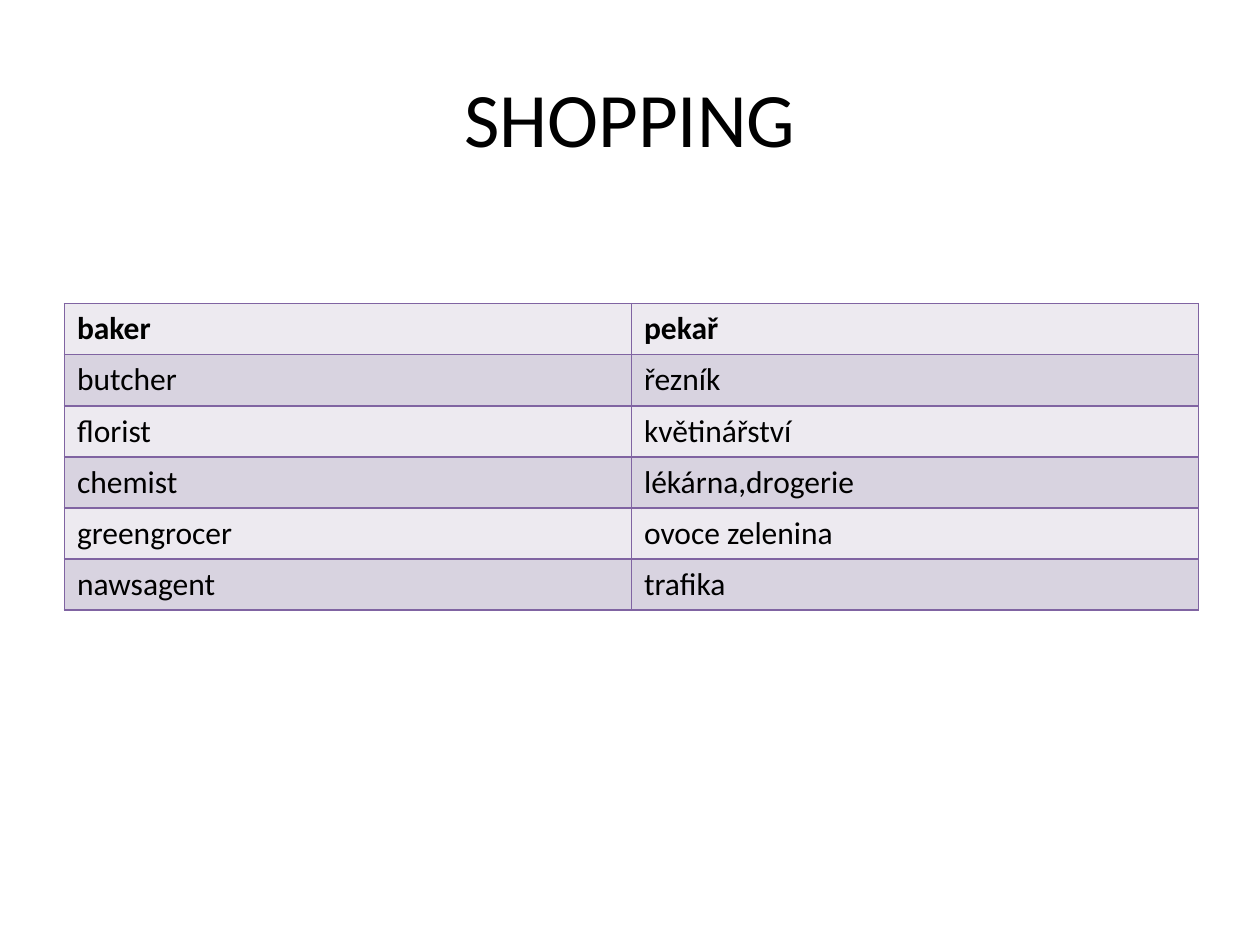
"""Build the SHOPPING vocabulary slide."""
from dataclasses import dataclass

from lxml.etree import SubElement
from pptx import Presentation
from pptx.dml.color import RGBColor
from pptx.enum.text import MSO_VERTICAL_ANCHOR as Anchor, PP_PARAGRAPH_ALIGNMENT as Align
from pptx.oxml.ns import qn
from pptx.slide import Slide
from pptx.table import _Cell as Cell
from pptx.text.text import _Paragraph as Paragraph
from pptx.util import Cm, Pt

COLORS = {
    "text": "000000",
    "border": "8064A2",
    "light_row": "EDEAF0",
    "dark_row": "D8D3E0",
}
FONT = "Calibri"


@dataclass(frozen=True)
class Entry:
    english: str
    czech: str
    bold: bool = False


ENTRIES = [
    Entry("baker", "pekař", bold=True),
    Entry("butcher", "řezník"),
    Entry("florist", "květinářství"),
    Entry("chemist", "lékárna,drogerie"),
    Entry("greengrocer", "ovoce zelenina"),
    Entry("nawsagent", "trafika"),
]


def add_run(paragraph: Paragraph, text: str, size: int, bold: bool = False) -> None:
    run = paragraph.add_run()
    run.text = text
    run.font.name = FONT
    run.font.size = Pt(size)
    run.font.bold = bold
    run.font.color.rgb = RGBColor.from_string(COLORS["text"])


def add_borders(cell: Cell) -> None:
    properties = cell._tc.get_or_add_tcPr()
    for side in ("lnL", "lnR", "lnT", "lnB"):
        line = SubElement(properties, qn(f"a:{side}"), w=str(Pt(1)))
        fill = SubElement(line, qn("a:solidFill"))
        SubElement(fill, qn("a:srgbClr"), val=COLORS["border"])


def add_title(slide: Slide, text: str) -> None:
    title = slide.shapes.title
    title.left, title.top, title.width, title.height = Cm(1.27), Cm(0.76), Cm(22.86), Cm(3.18)
    title.text_frame.vertical_anchor = Anchor.MIDDLE
    paragraph = title.text_frame.paragraphs[0]
    paragraph.alignment = Align.CENTER
    add_run(paragraph, text, 44)


def add_vocabulary(slide: Slide, entries: list[Entry]) -> None:
    row_height = Cm(1.03)
    table = slide.shapes.add_table(
        len(entries), 2, Cm(1.3), Cm(6.12), Cm(22.86), row_height * len(entries)
    ).table
    for index, (row, entry) in enumerate(zip(table.rows, entries)):
        row.height = row_height
        shade = COLORS["dark_row" if index % 2 else "light_row"]
        for cell, word in zip(row.cells, (entry.english, entry.czech)):
            add_borders(cell)
            cell.fill.solid()
            cell.fill.fore_color.rgb = RGBColor.from_string(shade)
            add_run(cell.text_frame.paragraphs[0], word, 18, entry.bold)


def main() -> None:
    presentation = Presentation()
    presentation.slide_width, presentation.slide_height = Cm(25.4), Cm(19.05)
    slide = presentation.slides.add_slide(presentation.slide_layouts.get_by_name("Title Only"))
    add_title(slide, "SHOPPING")
    add_vocabulary(slide, ENTRIES)
    presentation.save("out.pptx")


if __name__ == "__main__":
    main()
